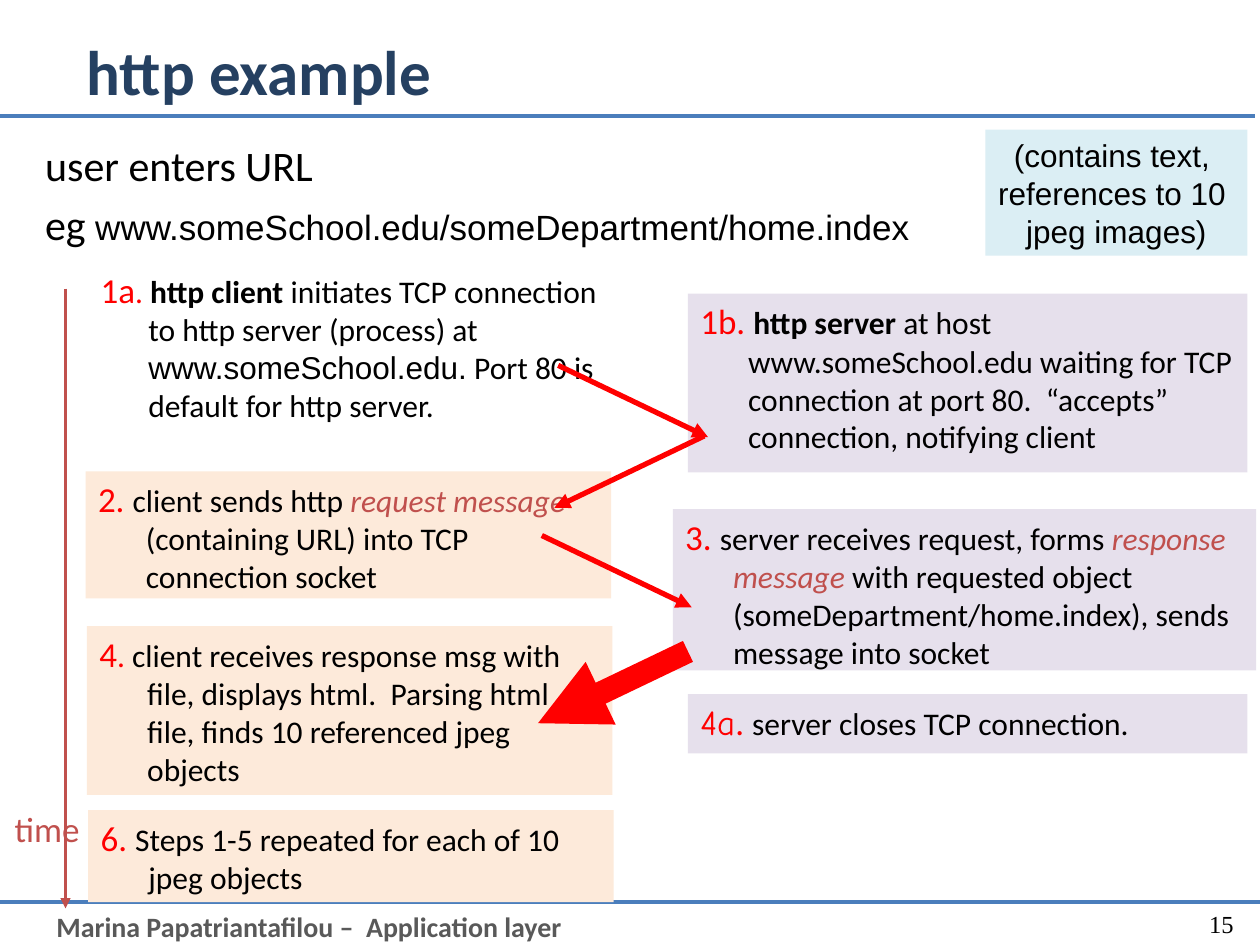
from lxml import etree
from pptx import Presentation
from pptx.dml.color import RGBColor
from pptx.enum.shapes import MSO_CONNECTOR, MSO_SHAPE
from pptx.enum.text import MSO_ANCHOR, PP_ALIGN
from pptx.oxml.ns import qn
from pptx.util import Inches, Pt

STRAIGHT = MSO_CONNECTOR.STRAIGHT
RECTANGLE = MSO_SHAPE.RECTANGLE
TOP, MIDDLE = MSO_ANCHOR.TOP, MSO_ANCHOR.MIDDLE
LEFT, CENTER, RIGHT = PP_ALIGN.LEFT, PP_ALIGN.CENTER, PP_ALIGN.RIGHT

COLUMNS, ROWS = 100, 75
SLIDE_WIDTH, SLIDE_HEIGHT = Inches(10), Inches(7.5)
HANGING = Inches(0.38)
COLORS = {
    "black": "000000", "navy": "254061", "gray": "595959", "rule": "4B7EBC",
    "red": "FF0000", "brick": "C0504D", "client": "FDEADA",
    "server": "E6E0EC", "note": "DBEEF4",
}

BODY = {"size": 18, "font": "Calibri", "color": "black"}
BOLD = {**BODY, "bold": True}
MESSAGE = {**BODY, "color": "brick", "italic": True}
NUMBER = {**BODY, "size": 20, "color": "red"}
SMALL_NUMBER = {**NUMBER, "size": 18}
ARIAL = {**BODY, "font": "Arial"}


def rgb(name):
    return RGBColor.from_string(COLORS[name])


def across(columns):
    return round(SLIDE_WIDTH * columns / COLUMNS)


def down(rows):
    return round(SLIDE_HEIGHT * rows / ROWS)


def add_box(slide, box, paragraphs, fill=None, align=LEFT, anchor=TOP,
            hanging=False, wrap=True):
    left, top, width, height = box
    place = across(left), down(top), across(width), down(height)
    if fill:
        shape = slide.shapes.add_shape(RECTANGLE, *place)
        shape.shadow.inherit = False
        shape.fill.solid()
        shape.fill.fore_color.rgb = rgb(fill)
        shape.line.fill.background()
    else:
        shape = slide.shapes.add_textbox(*place)
    frame = shape.text_frame
    frame.word_wrap = wrap
    frame.vertical_anchor = anchor
    for index, runs in enumerate(paragraphs):
        paragraph = frame.add_paragraph() if index else frame.paragraphs[0]
        paragraph.alignment = align
        if hanging:
            properties = paragraph._p.get_or_add_pPr()
            properties.set("marL", str(HANGING))
            properties.set("indent", str(-HANGING))
            paragraph.space_before = Pt(5 if index else 0)
        for text, style in runs:
            run = paragraph.add_run()
            run.text = text
            run.font.size = Pt(style["size"])
            run.font.name = style["font"]
            run.font.color.rgb = rgb(style["color"])
            run.font.bold = style.get("bold", False)
            run.font.italic = style.get("italic", False)
    return shape


def add_line(slide, start, end, color, weight, arrow=False):
    line = slide.shapes.add_connector(
        STRAIGHT, across(start[0]), down(start[1]), across(end[0]), down(end[1]))
    line.line.color.rgb = rgb(color)
    line.line.width = Pt(weight)
    if arrow:
        etree.SubElement(line.line._get_or_add_ln(), qn("a:tailEnd"), type="triangle")
    etree.SubElement(line._element.spPr, qn("a:effectLst"))


def add_footer(slide, box):
    left, top, width, height = box
    add_line(slide, (left, top), (left + width, top), "rule", 2.25)
    credit = {"size": 16, "font": "Calibri", "color": "gray", "bold": True}
    add_box(slide, (left + 3.5, top + 0.1, 80, height),
            [[("Marina Papatriantafilou –  Application layer", credit)]])
    number = {"size": 14, "font": "Times New Roman", "color": "black"}
    add_box(slide, (left + width - 9.1, top - 0.3, 8, 4), [[("15", number)]],
            align=RIGHT, anchor=MIDDLE)


def add_header(slide, box):
    left, top, width, height = box
    add_line(slide, (left, top + height), (left + width, top + height), "rule", 2.25)
    title = {"size": 36, "font": "Calibri", "color": "navy", "bold": True}
    add_box(slide, (left + 6.3, top + 2.8, 85, 5.6), [[("http example", title)]],
            anchor=MIDDLE)


def add_request(slide, box):
    left, top, width, height = box
    large = {**BODY, "size": 24}
    add_box(slide, (left, top + 0.3, 72.6, height - 1.4), [
        [("user enters URL", large)],
        [("eg ", large),
         ("www.someSchool.edu/someDepartment/home.index", {**ARIAL, "size": 20})],
    ], hanging=True)
    lines = ["(contains text, ", "references to 10 ", "jpeg images)"]
    add_box(slide, (left + width - 20.8, top, 20.8, height),
            [[(line, ARIAL)] for line in lines], "note", CENTER, wrap=False)


def add_timeline(slide, box):
    left, top, width, height = box
    middle = left + 5.1
    add_line(slide, (middle, top), (middle, top + height), "brick", 1.5, arrow=True)
    label = {**BODY, "size": 20, "color": "brick"}
    add_box(slide, (left, top + 40.7, width, 4.4), [[("time", label)]],
            align=CENTER, wrap=False)


def add_steps(slide, box, fill, steps):
    left, top, width, _ = box
    for shift, offset, extra, height, filled, runs in steps:
        add_box(slide, (left + shift, top + offset, width + extra, height), [runs],
                fill if filled else None, hanging=True)


def add_messages(slide, box):
    left, top, width, _ = box
    slope = 5.7
    arrows = [
        (1.7, 0, 1, 3), (13.3, 5.6, -1, 3), (0.4, 13.5, 1, 3), (12, 22.7, -1, 13.25),
    ]
    for column, row, direction, weight in arrows:
        start = left + column, top + row
        end = start[0] + direction * width, start[1] + slope
        add_line(slide, start, end, "red", weight, arrow=True)


CLIENT_STEPS = [
    (0.2, 0, 0, 14.6, False, [
        ("1a", NUMBER), (". ", SMALL_NUMBER), ("http client ", BOLD),
        ("initiates TCP connection to http server (process) at ", BODY),
        ("www.someSchool.edu.", ARIAL),
        (" Port 80 is default for http server.", BODY)]),
    (0, 16.6, 0, 10.1, True, [
        ("2. ", NUMBER), ("client sends http ", BODY), ("request message", MESSAGE),
        (" (containing URL) into TCP connection socket", BODY)]),
    (0.1, 28.9, 0, 13.4, True, [
        ("4", NUMBER), (".", SMALL_NUMBER),
        (" client receives response msg with file, displays html.  Parsing html "
         "file, finds 10 referenced jpeg  objects", BODY)]),
    (0.2, 43.5, 0, 7.3, True, [
        ("6. ", NUMBER), ("Steps 1-5 repeated for each of 10 jpeg objects", BODY)]),
]

SERVER_STEPS = [
    (0, 0, 0, 14.2, True, [
        ("1b. ", NUMBER), ("http server ", BOLD),
        ("at host www.someSchool.edu waiting for TCP connection at port 80.  "
         "“accepts” connection, notifying client", BODY)]),
    (-1.2, 17.1, 1.9, 12.8, True, [
        ("3. ", NUMBER), ("server receives request, forms ", BODY),
        ("response message ", MESSAGE),
        ("with requested object (someDepartment/home.index), sends message "
         "into socket", BODY)]),
    (0, 31.8, 0, 4.7, True, [
        ("4a", {**NUMBER, "font": "Comic Neue"}), (". ", NUMBER),
        ("server closes TCP connection.", BODY)]),
]


def main():
    presentation = Presentation()
    presentation.slide_width, presentation.slide_height = SLIDE_WIDTH, SLIDE_HEIGHT
    slide = presentation.slides.add_slide(presentation.slide_layouts[6])
    add_footer(slide, (0, 71.6, 100, 3.4))
    add_header(slide, (-0.4, 0, 100, 9.2))
    add_timeline(slide, (0.1, 22.9, 7.3, 49.2))
    add_request(slide, (2.6, 10.3, 96.4, 10))
    add_steps(slide, (6.8, 20.8, 41.7, 50.8), "client", CLIENT_STEPS)
    add_steps(slide, (54.6, 23.3, 44.4, 36.5), "server", SERVER_STEPS)
    add_messages(slide, (42.6, 29, 11.9, 28.5))
    presentation.save("out.pptx")


if __name__ == "__main__":
    main()
